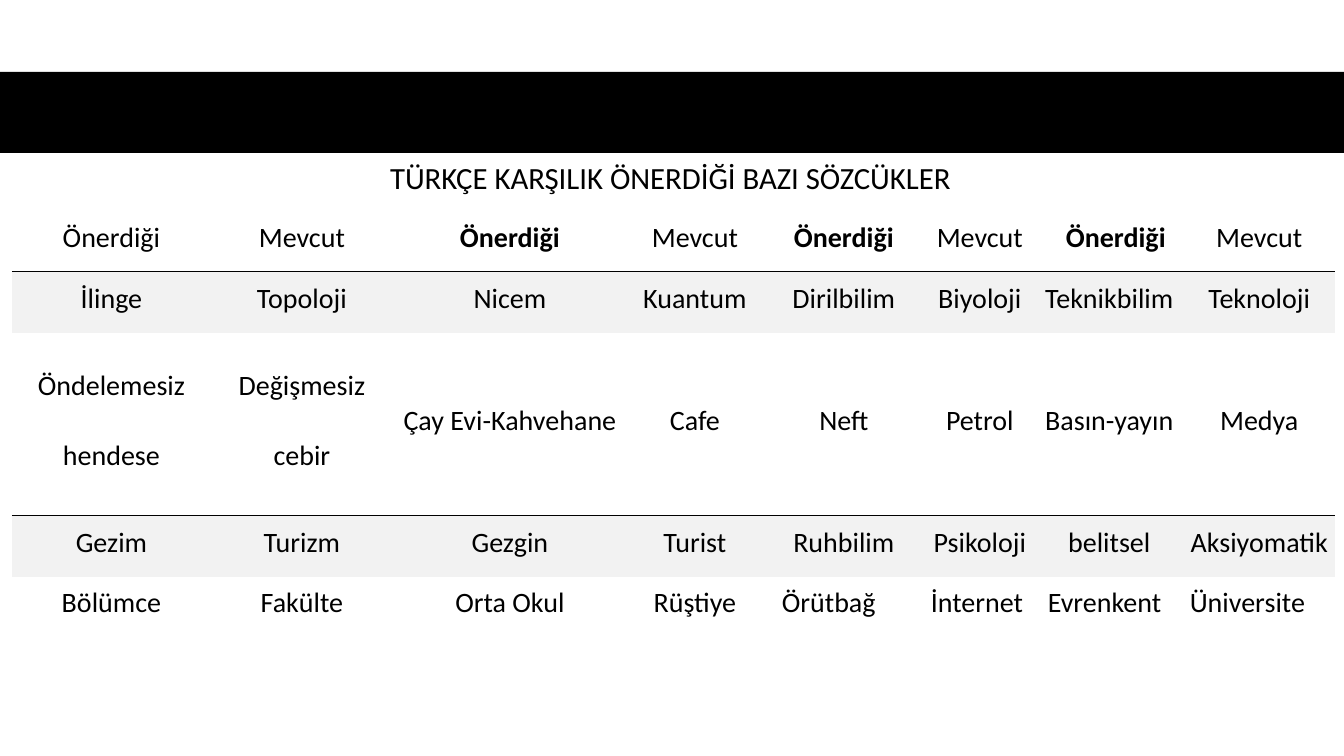
from lxml import etree
from pptx import Presentation
from pptx.dml.color import RGBColor as RGB
from pptx.enum.shapes import MSO_SHAPE as SHAPE
from pptx.enum.text import MSO_ANCHOR as ANCHOR, PP_ALIGN as ALIGN
from pptx.oxml.ns import qn
from pptx.util import Pt

# Content
TITLE = "TÜRKÇE KARŞILIK ÖNERDİĞİ BAZI SÖZCÜKLER"
WORDS = [
    ["Önerdiği", "Mevcut"] * 4,
    ["İlinge", "Topoloji", "Nicem", "Kuantum",
     "Dirilbilim", "Biyoloji", "Teknikbilim", "Teknoloji"],
    ["Öndelemesiz\nhendese", "Değişmesiz\ncebir", "Çay Evi-Kahvehane", "Cafe",
     "Neft", "Petrol", "Basın-yayın", "Medya"],
    ["Gezim", "Turizm", "Gezgin", "Turist",
     "Ruhbilim", "Psikoloji", "belitsel", "Aksiyomatik"],
    ["Bölümce", "Fakülte", "Orta Okul", "Rüştiye",
     "Örütbağ", "İnternet", "Evrenkent", "Üniversite"],
]

# Look, lengths in px
COLORS = {"ink": "000000", "stripe": "F2F2F2"}
FONT = "Calibri"
EMU_PER_PX = 12192000 / 1344
SLIDE = (1344, 756)
BAND = (0, 72, 1344, 81)
TABLE_LEFT, TABLE_TOP = 12, 153
COLS = [205, 176, 240, 130, 168, 104, 155, 145]
ROWS = [59, 60, 61, 183, 61, 60]
STRIPED = {2, 4}
RULED_BELOW = {1, 3}
BOLD = {(1, 2), (1, 4), (1, 6)}
LEFT_ALIGNED = {(5, c) for c in range(4, 8)}
INDENTS = {(1, 6): 13, (5, 4): 19, (5, 6): 13}
PLAIN_STYLE = "{2D5ABB26-0587-4C30-8999-92F81FD0307C}"


def px(n):
    return round(n * EMU_PER_PX)


def color(name):
    return RGB.from_string(COLORS[name])


def set_borders(cell, ruled):
    tcPr = cell._tc.get_or_add_tcPr()
    for side in ("lnL", "lnR", "lnT", "lnB"):
        ln = etree.SubElement(tcPr, qn(f"a:{side}"), w=str(Pt(0.75)))
        if side in ruled:
            fill = etree.SubElement(ln, qn("a:solidFill"))
            etree.SubElement(fill, qn("a:srgbClr"), val=COLORS["ink"])
        else:
            etree.SubElement(ln, qn("a:noFill"))


def fill_cell(cell, row, col, text):
    cell.margin_left, cell.margin_right = 0, px(6)
    cell.margin_top, cell.margin_bottom = px(4 if row else 3), px(14)
    cell.vertical_anchor = ANCHOR.MIDDLE if row else ANCHOR.BOTTOM
    ruled = {"lnT"} if row in STRIPED else {"lnB"} if row in RULED_BELOW else set()
    set_borders(cell, ruled)
    if row in STRIPED:
        cell.fill.solid()
        cell.fill.fore_color.rgb = color("stripe")
    else:
        cell.fill.background()
    tf = cell.text_frame
    for i, line in enumerate(text.split("\n")):
        p = tf.add_paragraph() if i else tf.paragraphs[0]
        p.alignment = ALIGN.LEFT if (row, col) in LEFT_ALIGNED else ALIGN.CENTER
        p.line_spacing = 1.07
        p.space_before = p.space_after = Pt(12)
        if (row, col) in INDENTS:
            p._p.get_or_add_pPr().set("marL", str(px(INDENTS[row, col])))
        r = p.add_run()
        r.text = line
        r.font.name = FONT
        r.font.size = Pt(20 if row else 22)
        r.font.bold = (row, col) in BOLD
        r.font.color.rgb = color("ink")


prs = Presentation()
prs.slide_width, prs.slide_height = map(px, SLIDE)
s = prs.slides.add_slide(prs.slide_layouts[6])

# Black band
band = s.shapes.add_shape(SHAPE.RECTANGLE, *map(px, BAND))
band.shadow.inherit = False
band.fill.solid()
band.fill.fore_color.rgb = color("ink")
band.line.fill.background()

# Word table
frame = s.shapes.add_table(len(ROWS), len(COLS), px(TABLE_LEFT), px(TABLE_TOP),
                           px(sum(COLS)), px(sum(ROWS)))
table = frame.table
table.first_row = table.horz_banding = False
table._tbl.tblPr.find(qn("a:tableStyleId")).text = PLAIN_STYLE
for column, width in zip(table.columns, COLS):
    column.width = px(width)
for row, height in zip(table.rows, ROWS):
    row.height = px(height)

# Title row, then the word pairs
table.cell(0, 0).merge(table.cell(0, len(COLS) - 1))
fill_cell(table.cell(0, 0), 0, 0, TITLE)
for r_no, words in enumerate(WORDS, start=1):
    for c_no, word in enumerate(words):
        fill_cell(table.cell(r_no, c_no), r_no, c_no, word)

prs.save("out.pptx")
